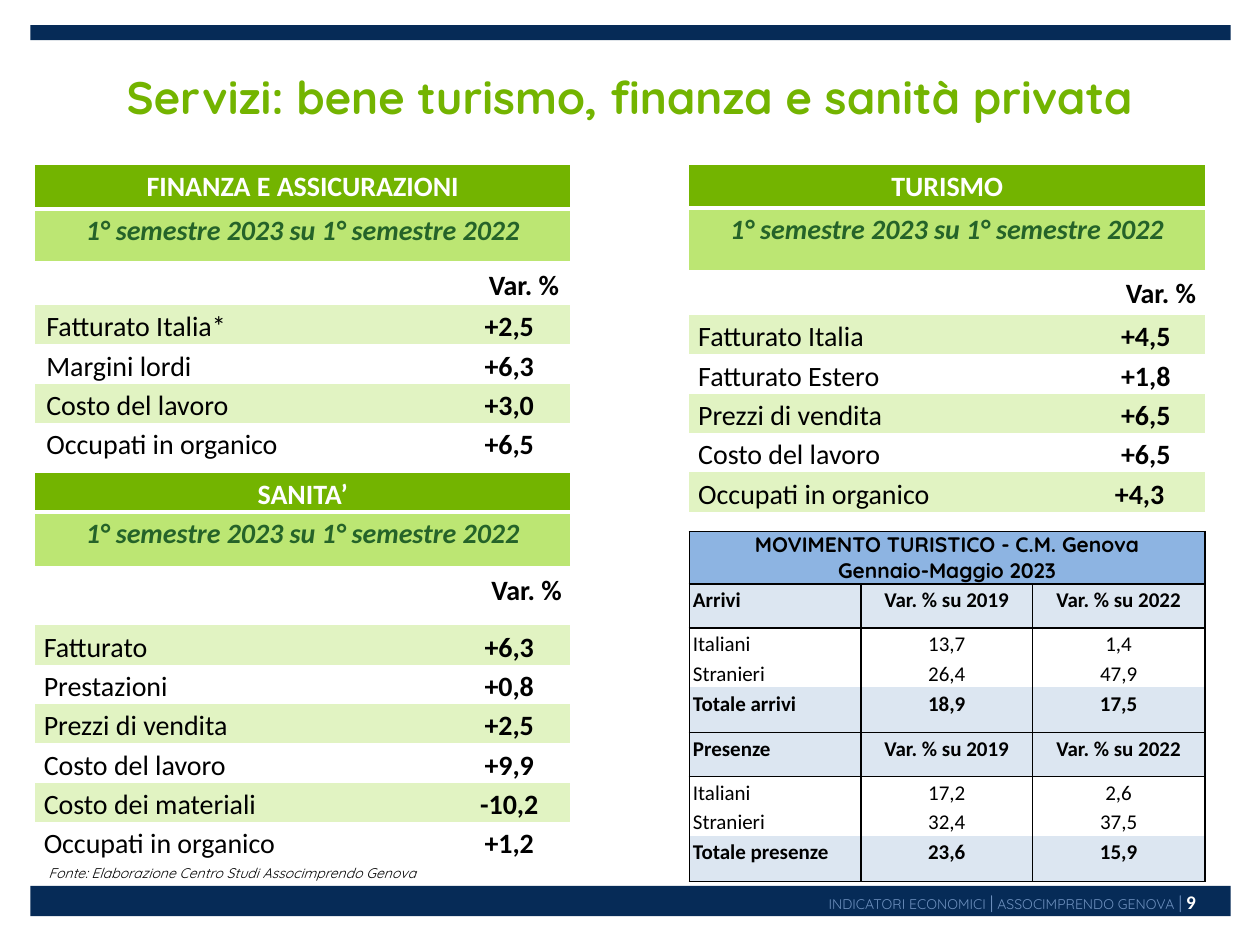
from lxml import etree
from pptx import Presentation
from pptx.dml.color import RGBColor
from pptx.enum.shapes import MSO_SHAPE
from pptx.enum.text import MSO_ANCHOR, PP_ALIGN
from pptx.oxml.ns import qn
from pptx.util import Pt

LEFT, CENTER, RIGHT = PP_ALIGN.LEFT, PP_ALIGN.CENTER, PP_ALIGN.RIGHT
TOP, MIDDLE = MSO_ANCHOR.TOP, MSO_ANCHOR.MIDDLE
RECTANGLE = MSO_SHAPE.RECTANGLE
PLAIN_STYLE = "{2D5ABB26-0587-4C30-8999-92F81FD0307C}"

NAVY, GREEN, BLACK, WHITE = "062B57", "73B400", "000000", "FFFFFF"
LIME, PALE_GREEN, BLUE, PALE_BLUE = "BCE673", "E1F3C2", "8DB4E2", "DCE6F1"

TITLE = "Servizi: bene turismo, finanza e sanità privata"
PERIOD = "1° semestre 2023 su 1° semestre 2022"
SOURCE = "Fonte: Elaborazione Centro Studi Associmprendo Genova"
BARS = [(17.3, 506.2, 686, 17.3), (17.3, 14.4, 686, 8.6)]

FOOTER_FONT = {"name": "Quicksand", "color": "6D90BE"}
FOOTER = [
    ("INDICATORI ECONOMICI ", {**FOOTER_FONT, "size": 8}),
    ("|", {**FOOTER_FONT, "size": 10}),
    (" ASSOCIMPRENDO GENOVA ", {**FOOTER_FONT, "size": 8}),
    ("|", {**FOOTER_FONT, "size": 10}),
    (" ", {**FOOTER_FONT, "size": 8}),
    ("9", {"name": "Calibri", "color": WHITE, "size": 11, "bold": True}),
]

SECTORS = [
    {"name": "TURISMO", "at": (394, 94.3), "columns": (227, 67.5),
     "heads": (24.5, 36.7, 24.5), "inset": 5,
     "values": [("Fatturato Italia", "+4,5"), ("Fatturato Estero", "+1,8"),
                ("Prezzi di vendita", "+6,5"), ("Costo del lavoro", "+6,5"),
                ("Occupati in organico", "+4,3")]},
    {"name": "FINANZA E ASSICURAZIONI", "at": (20, 94.3), "columns": (236, 70),
     "heads": (25.2, 31, 23.8), "inset": 6.5,
     "values": [("Fatturato Italia*", "+2,5"), ("Margini lordi", "+6,3"),
                ("Costo del lavoro", "+3,0"), ("Occupati in organico", "+6,5")]},
    {"name": "SANITA’", "at": (20, 270), "columns": (236, 70),
     "heads": (22.5, 32.4, 32.4), "inset": 5,
     "values": [("Fatturato", "+6,3"), ("Prestazioni", "+0,8"),
                ("Prezzi di vendita", "+2,5"), ("Costo del lavoro", "+9,9"),
                ("Costo dei materiali", "-10,2"), ("Occupati in organico", "+1,2")]},
]
SECTOR_ROW = 22.5

TOURISM_HEADING = ["MOVIMENTO TURISTICO - C.M. Genova", "Gennaio-Maggio 2023"]
TOURISM_BLOCKS = [
    [("Arrivi", "Var. % su 2019", "Var. % su 2022"), ("Italiani", "13,7", "1,4"),
     ("Stranieri", "26,4", "47,9"), ("Totale arrivi", "18,9", "17,5")],
    [("Presenze", "Var. % su 2019", "Var. % su 2022"), ("Italiani", "17,2", "2,6"),
     ("Stranieri", "32,4", "37,5"), ("Totale presenze", "23,6", "15,9")],
]
BLOCK_ROWS = (25, 17, 17, 26)


def color(value):
    return RGBColor.from_string(value)


def write(frame, paragraphs, align=LEFT, anchor=TOP, spacing=1.15, after=10):
    """Fill a text frame with paragraphs, each a list of (text, format) spans."""
    frame.word_wrap = True
    frame.vertical_anchor = anchor
    for index, spans in enumerate(paragraphs):
        para = frame.add_paragraph() if index else frame.paragraphs[0]
        para.alignment, para.line_spacing, para.space_after = align, spacing, Pt(after)
        for text, style in spans:
            span = para.add_run()
            span.text = text
            for key, value in style.items():
                if key == "color":
                    span.font.color.rgb = color(value)
                else:
                    setattr(span.font, key, Pt(value) if key == "size" else value)


def add_text_box(page, at, spans, align, inset=None):
    frame = page.shapes.add_textbox(*map(Pt, at)).text_frame
    if inset is not None:
        for side in ("left", "right", "top", "bottom"):
            setattr(frame, f"margin_{side}", Pt(inset))
    write(frame, [spans], align)


def add_plain_table(page, at, columns, rows, inset):
    size = (sum(columns), sum(rows))
    table = page.shapes.add_table(len(rows), len(columns), *map(Pt, at + size)).table
    table.first_row = table.horz_banding = False
    table._tbl.tblPr.find(qn("a:tableStyleId")).text = PLAIN_STYLE
    for items, key, lengths in ((table.columns, "width", columns), (table.rows, "height", rows)):
        for item, length in zip(items, lengths):
            setattr(item, key, Pt(length))
    for cell in table.iter_cells():
        cell.margin_left = cell.margin_right = Pt(inset)
        cell.margin_top = cell.margin_bottom = 0
    return table


def paint(cell, fill, sides="", line=BLACK, width=1):
    """Draw the borders named by letters in L, R, T, B order, then the fill."""
    properties = cell._tc.get_or_add_tcPr()
    for side in sides:
        border = etree.SubElement(properties, qn(f"a:ln{side}"), w=str(Pt(width)))
        solid = etree.SubElement(border, qn("a:solidFill"))
        etree.SubElement(solid, qn("a:srgbClr"), val=line)
    if fill:
        cell.fill.solid()
        cell.fill.fore_color.rgb = color(fill)
    else:
        cell.fill.background()


def add_sector(page, sector):
    values = sector["values"]
    rows = sector["heads"] + (SECTOR_ROW,) * len(values)
    table = add_plain_table(page, sector["at"], sector["columns"], rows, sector["inset"])
    base = {"name": "Calibri", "size": 16, "color": BLACK, "bold": True}
    banners = [(sector["name"], GREEN, "B", {"color": WHITE}),
               (PERIOD, LIME, "T", {"color": "256329", "italic": True})]
    for row, (text, fill, side, style) in enumerate(banners):
        for column in range(2):
            paint(table.cell(row, column), fill, side, WHITE, 3)
        table.cell(row, 0).merge(table.cell(row, 1))
        write(table.cell(row, 0).text_frame, [[(text, {**base, **style})]], CENTER, MIDDLE)
    for column in range(2):
        paint(table.cell(2, column), None)
    write(table.cell(2, 1).text_frame, [[("Var. %", base)]], RIGHT, MIDDLE)
    for index, pair in enumerate(values):
        for column, text in enumerate(pair):
            cell = table.cell(index + 3, column)
            paint(cell, None if index % 2 else PALE_GREEN)
            write(cell.text_frame, [[(text, {**base, "bold": column == 1})]],
                  CENTER if column else LEFT, MIDDLE)
    return table


def add_tourism_flows(page):
    rows = (30,) + BLOCK_ROWS * len(TOURISM_BLOCKS)
    table = add_plain_table(page, (394, 303.8), (98, 98, 98.5), rows, 2)
    base = {"name": "Calibri", "size": 12, "color": BLACK, "bold": True}
    for column in range(3):
        paint(table.cell(0, column), BLUE, "LRTB")
    table.cell(0, 0).merge(table.cell(0, 2))
    heading = [[(text, {**base, "name": "Quicksand"})] for text in TOURISM_HEADING]
    write(table.cell(0, 0).text_frame, heading, CENTER, MIDDLE, 1, 0)
    for block, lines in enumerate(TOURISM_BLOCKS):
        for index, line in enumerate(lines):
            strong = index in (0, len(lines) - 1)
            sides = {0: "LRT", len(lines) - 1: "LRB"}.get(index, "LR")
            for column, text in enumerate(line):
                cell = table.cell(1 + block * len(lines) + index, column)
                paint(cell, PALE_BLUE if strong else None, sides)
                write(cell.text_frame, [[(text, {**base, "bold": strong})]],
                      CENTER if column else LEFT, MIDDLE)


def main():
    deck = Presentation()
    deck.slide_width, deck.slide_height = Pt(720), Pt(540)
    page = deck.slides.add_slide(deck.slide_layouts[5])

    for at in BARS:
        bar = page.shapes.add_shape(RECTANGLE, *map(Pt, at))
        bar.shadow.inherit = False
        bar.fill.solid()
        bar.fill.fore_color.rgb = color(NAVY)
        bar.line.fill.background()
    add_text_box(page, (274.3, 507, 409, 20), FOOTER, RIGHT, 0)

    title = page.shapes.title
    title.left, title.top, title.width, title.height = map(Pt, (20, 36, 680.5, 49.7))
    title_style = {"name": "Quicksand", "size": 26, "color": GREEN, "bold": True}
    write(title.text_frame, [[(TITLE, title_style)]], CENTER, TOP, 1, 0)

    tourism, *_ = [add_sector(page, sector) for sector in SECTORS]
    tourism.cell(7, 1).margin_right = Pt(12)
    add_tourism_flows(page)
    source_style = {"name": "Quicksand", "size": 8, "color": BLACK, "italic": True}
    add_text_box(page, (14.4, 489, 237, 18), [(SOURCE, source_style)], CENTER)
    deck.save("out.pptx")


if __name__ == "__main__":
    main()
